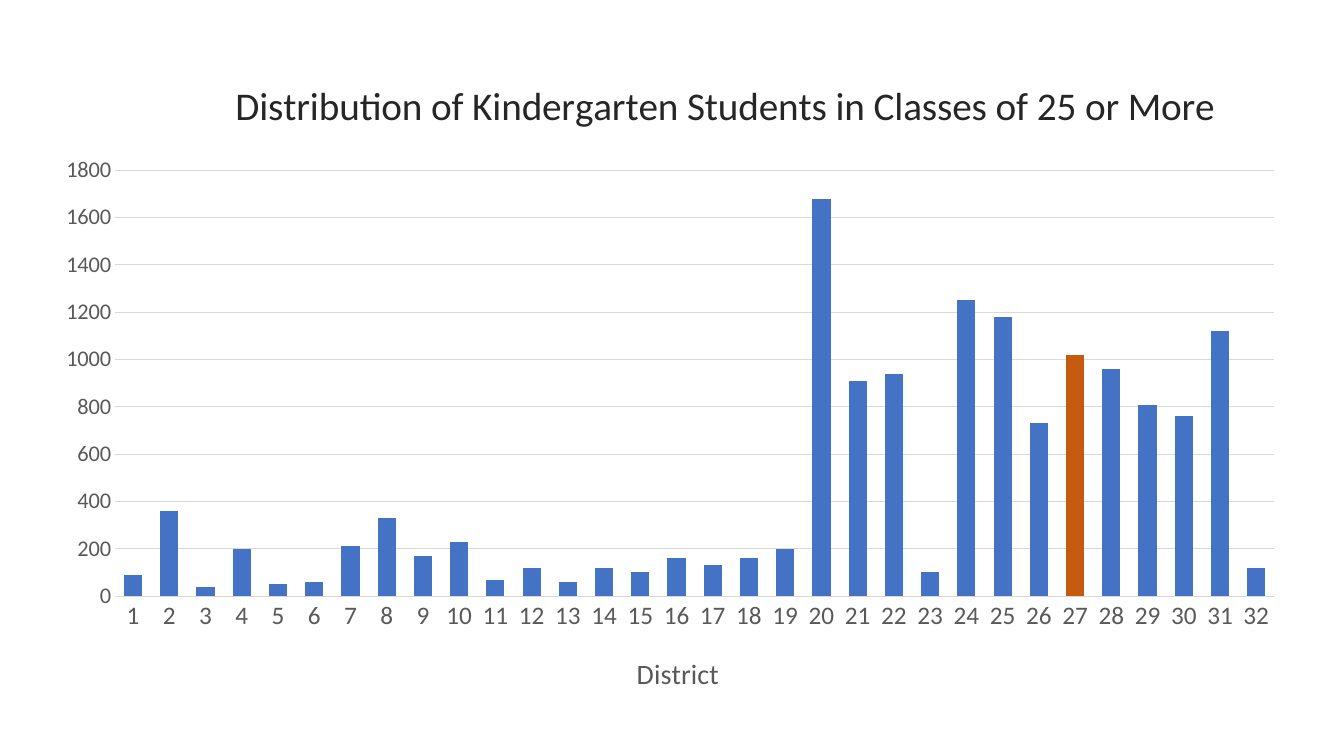
"""Build a slide with a column chart of kindergarten students by district."""
from lxml.etree import Element, SubElement
from pptx import Presentation
from pptx.chart.data import CategoryChartData
from pptx.dml.color import RGBColor
from pptx.enum.chart import XL_CHART_TYPE, XL_TICK_MARK
from pptx.oxml.ns import qn
from pptx.util import Inches, Pt

TITLE = "Distribution of Kindergarten Students in Classes of 25 or More"
AXIS_TITLE = "District"
STUDENTS = [
    90, 360, 40, 200, 50, 60, 210, 330,
    170, 230, 70, 120, 60, 120, 100, 160,
    130, 160, 200, 1680, 910, 940, 100, 1250,
    1180, 730, 1020, 960, 810, 760, 1120, 120,
]
HIGHLIGHTED_DISTRICT = 27
FONT = "Calibri"
COLORS = {
    "bar": "4472C4",
    "highlight": "C55A11",
    "title": "262626",
    "label": "595959",
    "line": "D9D9D9",
}
SLIDE_SIZE = (13.33, 7.5)
CHART_BOX = (0.39, 0.52, 12.5, 6.5)
TITLE_PLACE = {"x": 0.15, "y": 0.03}
AXIS_TITLE_PLACE = {"x": 0.47, "y": 0.91}
PLOT_PLACE = {"x": 0.06, "y": 0.18, "w": 0.92, "h": 0.65}


def color(name):
    """Return a named colour."""
    return RGBColor.from_string(COLORS[name])


def style_font(font, size, color_name):
    """Set the face, size and colour of a font."""
    font.name = FONT
    font.size = Pt(size)
    font.bold = False
    font.color.rgb = color(color_name)


def place(element, shares, inner=False):
    """Fix a chart part at shares of the chart's size."""
    for old_layout in element.findall(qn("c:layout")):
        element.remove(old_layout)
    layout = Element(qn("c:layout"))
    manual = SubElement(layout, qn("c:manualLayout"))
    if inner:
        SubElement(manual, qn("c:layoutTarget")).set("val", "inner")
    for side in ("x", "y"):
        SubElement(manual, qn(f"c:{side}Mode")).set("val", "edge")
    for side, share in shares.items():
        SubElement(manual, qn(f"c:{side}")).set("val", str(share))
    element.insert(0 if inner else 1, layout)


def write_title(title, text, size, color_name, shares):
    """Write, format and place a chart or axis title."""
    title.text_frame.text = text
    style_font(title.text_frame.paragraphs[0].runs[0].font, size, color_name)
    place(title._element, shares)


def style_axes(chart):
    """Format both axes and the gridlines."""
    for axis, size in ((chart.category_axis, 18), (chart.value_axis, 16)):
        axis.major_tick_mark = XL_TICK_MARK.NONE
        axis.minor_tick_mark = XL_TICK_MARK.NONE
        style_font(axis.tick_labels.font, size, "label")
    chart.value_axis.minimum_scale = 0
    chart.value_axis.maximum_scale = 1800
    chart.value_axis.major_unit = 200
    chart.value_axis.format.line.fill.background()
    chart.value_axis.has_major_gridlines = True
    for part in (chart.category_axis, chart.value_axis.major_gridlines):
        part.format.line.color.rgb = color("line")
        part.format.line.width = Pt(0.75)


def add_district_chart(slide):
    """Add the column chart with one highlighted district."""
    data = CategoryChartData()
    data.categories = [str(number + 1) for number in range(len(STUDENTS))]
    data.add_series("Series 1", STUDENTS)
    box = [Inches(length) for length in CHART_BOX]
    chart = slide.shapes.add_chart(XL_CHART_TYPE.COLUMN_CLUSTERED, *box, data).chart
    chart.has_legend = False
    chart.font.name = FONT
    chart.font.size = Pt(10)
    write_title(chart.chart_title, TITLE, 28, "title", TITLE_PLACE)
    write_title(chart.category_axis.axis_title, AXIS_TITLE, 20, "label", AXIS_TITLE_PLACE)
    style_axes(chart)

    plot = chart.plots[0]
    plot.gap_width = 100
    plot.vary_by_categories = False
    series = plot.series[0]
    highlight = series.points[HIGHLIGHTED_DISTRICT - 1]
    for part, name in ((series, "bar"), (highlight, "highlight")):
        part.format.fill.solid()
        part.format.fill.fore_color.rgb = color(name)
    place(chart._chartSpace.find(f".//{qn('c:plotArea')}"), PLOT_PLACE, inner=True)


def main():
    """Create and save the presentation."""
    presentation = Presentation()
    presentation.slide_width, presentation.slide_height = map(Inches, SLIDE_SIZE)
    slide = presentation.slides.add_slide(presentation.slide_layouts[6])
    add_district_chart(slide)
    presentation.save("out.pptx")


if __name__ == "__main__":
    main()
